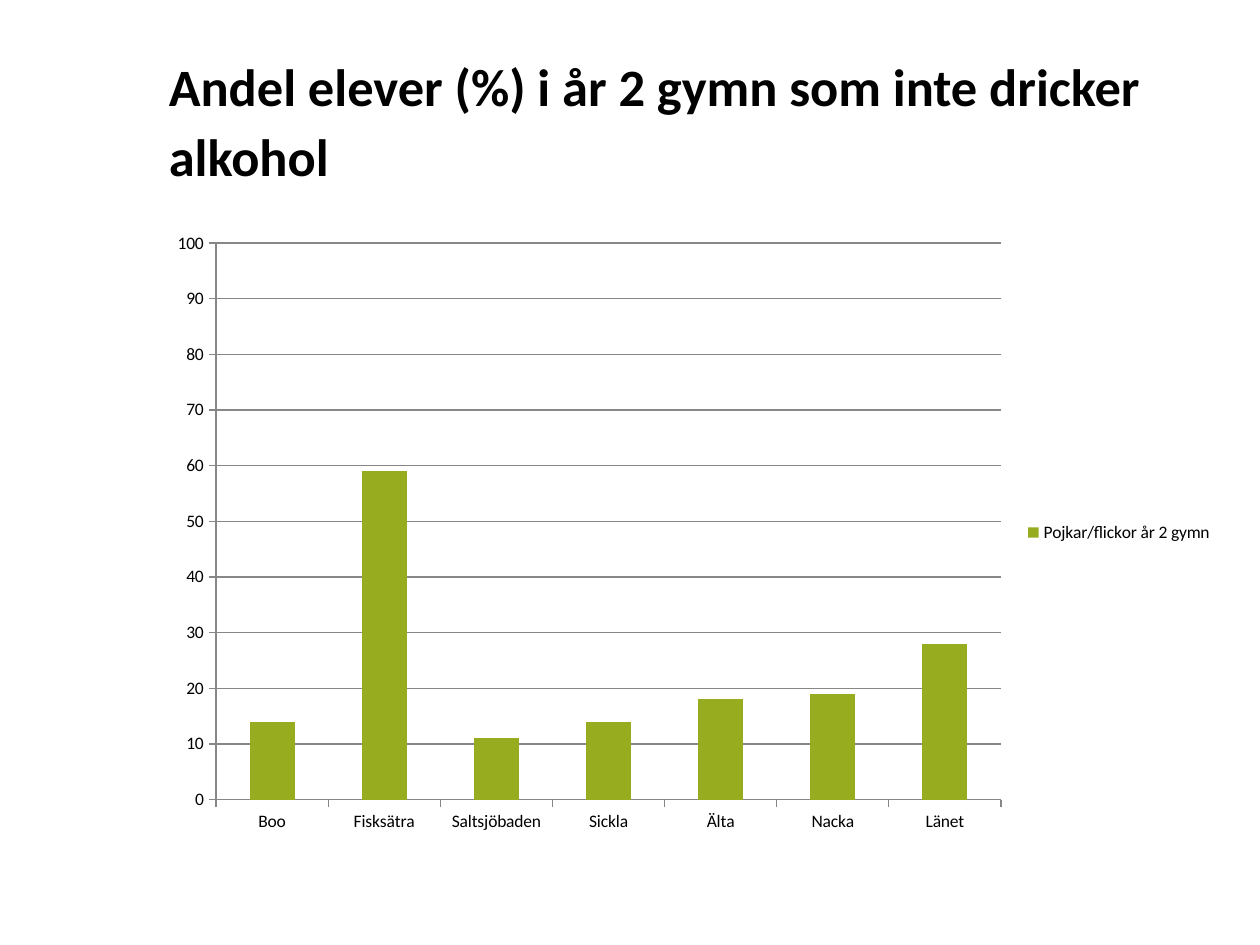
import pptx
import pptx.chart.data
import pptx.dml.color
import pptx.enum.chart
import pptx.enum.text
import pptx.util
from pptx.util import Cm

BLACK = pptx.dml.color.RGBColor(0x00, 0x00, 0x00)
GREEN = pptx.dml.color.RGBColor(0x97, 0xAC, 0x1E)
GRAY = pptx.dml.color.RGBColor(0x87, 0x87, 0x87)
FONT = "Calibri"
LEFT, WIDTH = Cm(3.15), Cm(21.56)

presentation = pptx.Presentation()
presentation.slide_width = Cm(25.4)
presentation.slide_height = Cm(19.05)
slide = presentation.slides.add_slide(presentation.slide_layouts[5])

# Title
title = slide.shapes.title
title.left, title.top, title.width, title.height = LEFT, Cm(0.76), WIDTH, Cm(3.18)
title.text_frame.text = "Andel elever (%) i år 2 gymn som inte dricker alkohol"
title.text_frame.vertical_anchor = pptx.enum.text.MSO_ANCHOR.MIDDLE
paragraph = title.text_frame.paragraphs[0]
paragraph.alignment = pptx.enum.text.PP_ALIGN.LEFT
paragraph.line_spacing = pptx.util.Pt(40)
paragraph.font.name = FONT
paragraph.font.size = pptx.util.Pt(30)
paragraph.font.bold = True
paragraph.font.color.rgb = BLACK

# Chart
chart_data = pptx.chart.data.CategoryChartData()
chart_data.categories = ["Boo", "Fisksätra", "Saltsjöbaden", "Sickla", "Älta", "Nacka", "Länet"]
chart_data.add_series("Pojkar/flickor år 2 gymn", [14, 59, 11, 14, 18, 19, 28])
chart = slide.shapes.add_chart(
    pptx.enum.chart.XL_CHART_TYPE.COLUMN_CLUSTERED,
    LEFT, Cm(4.45), WIDTH, Cm(12.57), chart_data,
).chart
chart.has_title = False
chart.font.name = FONT
chart.font.size = pptx.util.Pt(10)
chart.font.color.rgb = BLACK

chart.has_legend = True
chart.legend.position = pptx.enum.chart.XL_LEGEND_POSITION.RIGHT
chart.legend.include_in_layout = False

plot = chart.plots[0]
plot.vary_by_categories = False
plot.gap_width = 150
series = plot.series[0]
series.format.fill.solid()
series.format.fill.fore_color.rgb = GREEN

value_axis = chart.value_axis
value_axis.minimum_scale = 0
value_axis.maximum_scale = 100
value_axis.major_unit = 10
value_axis.has_major_gridlines = True
for axis in (chart.category_axis, value_axis):
    axis.major_tick_mark = pptx.enum.chart.XL_TICK_MARK.OUTSIDE
for line in (chart.category_axis.format.line, value_axis.format.line,
             value_axis.major_gridlines.format.line):
    line.color.rgb = GRAY
    line.width = pptx.util.Pt(0.75)

presentation.save("out.pptx")
